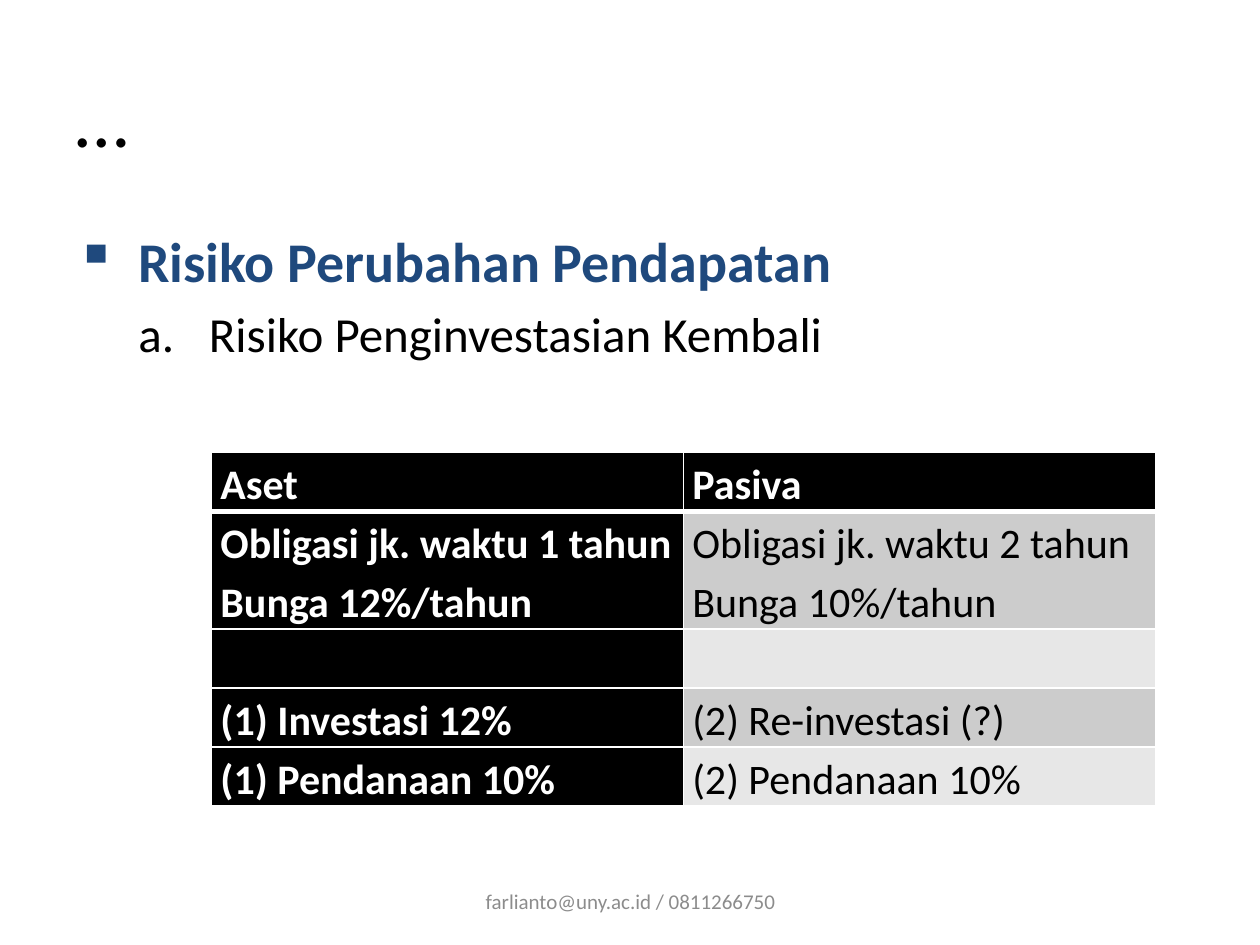
from dataclasses import dataclass
from itertools import product

from lxml.etree import SubElement
from pptx import Presentation
from pptx.dml.color import RGBColor
from pptx.enum.text import MSO_ANCHOR as Anchor, PP_ALIGN as Align
from pptx.oxml import parse_xml
from pptx.oxml.ns import nsdecls, qn
from pptx.util import Inches, Pt

SLIDE_WIDTH, SLIDE_HEIGHT = Inches(10), Inches(7.5)
COLUMNS, ROWS = 200, 150
FONT = "Calibri"
BLACK, WHITE, NAVY, GRAY = "000000", "FFFFFF", "1F497D", "8C8C8C"
BANDS = ("CCCCCC", "E7E7E7")
ROW_HEIGHT = 9.36


@dataclass(frozen=True)
class Area:
    """A place on the slide, in columns and rows of its grid."""
    left: float
    top: float
    width: float
    height: float

    def lengths(self) -> tuple:
        """Return left, top, width and height as slide lengths."""
        return across(self.left), down(self.top), across(self.width), down(self.height)


@dataclass(frozen=True)
class Item:
    """A list entry with its marker and indents in inches."""
    text: str
    size: int
    color: str
    bold: bool
    marker: tuple
    margin: float
    hanging: float
    level: int = 0
    before: float = 0


ITEMS = (
    Item("Risiko Perubahan Pendapatan", 32, NAVY, True,
         ("a:buChar", "char", "▪"), 0.5, 0.5),
    Item("Risiko Penginvestasian Kembali", 28, BLACK, False,
         ("a:buAutoNum", "type", "alphaLcPeriod"), 1.06, 0.56, 1, 5.6),
)
TABLE_ROWS = (
    (("Aset",), ("Pasiva",)),
    (("Obligasi jk. waktu 1 tahun", "Bunga 12%/tahun"),
     ("Obligasi jk. waktu 2 tahun", "Bunga 10%/tahun")),
    ((), ()),
    (("(1) Investasi 12%",), ("(2) Re-investasi (?)",)),
    (("(1) Pendanaan 10%",), ("(2) Pendanaan 10%",)),
)


def across(columns: float) -> int:
    """Turn grid columns into a length."""
    return round(SLIDE_WIDTH * columns / COLUMNS)


def down(rows: float) -> int:
    """Turn grid rows into a length."""
    return round(SLIDE_HEIGHT * rows / ROWS)


def rgb(color: str) -> RGBColor:
    """Turn a hex string into a colour."""
    return RGBColor.from_string(color)


def add_text(frame, text: str, *, size: int, color: str = BLACK, bold: bool = False,
             align=Align.LEFT, spacing: float = 1.0, before: float = 0):
    """Write one formatted paragraph, using the empty first one if there is one."""
    first = frame.paragraphs[0]
    paragraph = frame.add_paragraph() if first.runs else first
    paragraph.alignment = align
    paragraph.line_spacing = spacing
    paragraph.space_before = Pt(before)
    run = paragraph.add_run()
    run.text = text
    run.font.name = FONT
    run.font.size = Pt(size)
    run.font.bold = bold
    run.font.color.rgb = rgb(color)
    return paragraph


def add_box(slide, area: Area, anchor=Anchor.TOP):
    """Add a wrapping text box and return its text frame."""
    frame = slide.shapes.add_textbox(*area.lengths()).text_frame
    frame.word_wrap = True
    frame.vertical_anchor = anchor
    return frame


def add_item(frame, item: Item) -> None:
    """Write a list entry with its marker."""
    paragraph = add_text(frame, item.text, size=item.size, color=item.color,
                         bold=item.bold, before=item.before)
    paragraph.level = item.level
    properties = paragraph._p.get_or_add_pPr()
    properties.set("marL", str(Inches(item.margin)))
    properties.set("indent", str(-Inches(item.hanging)))
    tag, key, value = item.marker
    SubElement(properties, qn(tag)).set(key, value)


def set_borders(cell, top: float, bottom: float) -> None:
    """Give a cell white borders, with widths in points."""
    properties = cell._tc.get_or_add_tcPr()
    widths = {"lnL": 1, "lnR": 1, "lnT": top, "lnB": bottom}
    for position, (tag, width) in enumerate(widths.items()):
        properties.insert(position, parse_xml(
            f'<a:{tag} {nsdecls("a")} w="{Pt(width)}"><a:solidFill>'
            f'<a:srgbClr val="{WHITE}"/></a:solidFill></a:{tag}>'))


def add_balance_table(slide, left: float, top: float, width: float) -> None:
    """Add the table of assets and liabilities."""
    line_counts = [max(len(row[0]), 1) for row in TABLE_ROWS]
    area = Area(left, top, width, ROW_HEIGHT * sum(line_counts))
    table = slide.shapes.add_table(len(TABLE_ROWS), 2, *area.lengths()).table
    table.first_row = table.horz_banding = False
    for row, count in zip(table.rows, line_counts):
        row.height = down(ROW_HEIGHT * count)
    for row, column in product(range(len(TABLE_ROWS)), range(2)):
        cell = table.cell(row, column)
        strong = row == 0 or column == 0
        cell.margin_left = cell.margin_right = Inches(0.07)
        cell.margin_top = cell.margin_bottom = 0
        cell.fill.solid()
        cell.fill.fore_color.rgb = rgb(BLACK if strong else BANDS[(row - 1) % 2])
        set_borders(cell, top=3 if row == 1 else 1, bottom=3 if row == 0 else 1)
        for line in TABLE_ROWS[row][column]:
            add_text(cell.text_frame, line, size=24, bold=strong,
                     color=WHITE if strong else BLACK, spacing=1.15)


def main() -> None:
    """Build the slide and save it."""
    presentation = Presentation()
    presentation.slide_width, presentation.slide_height = SLIDE_WIDTH, SLIDE_HEIGHT
    slide = presentation.slides.add_slide(presentation.slide_layouts[6])
    add_text(add_box(slide, Area(10, 6, 180, 25), Anchor.MIDDLE), "…", size=44)
    body = add_box(slide, Area(10, 35, 180, 99))
    for item in ITEMS:
        add_item(body, item)
    add_balance_table(slide, left=33.6, top=71.8, width=149.8)
    add_text(add_box(slide, Area(68.4, 139, 63.4, 8), Anchor.MIDDLE),
             "farlianto@uny.ac.id / 0811266750", size=12, color=GRAY, align=Align.CENTER)
    presentation.save("out.pptx")


if __name__ == "__main__":
    main()
